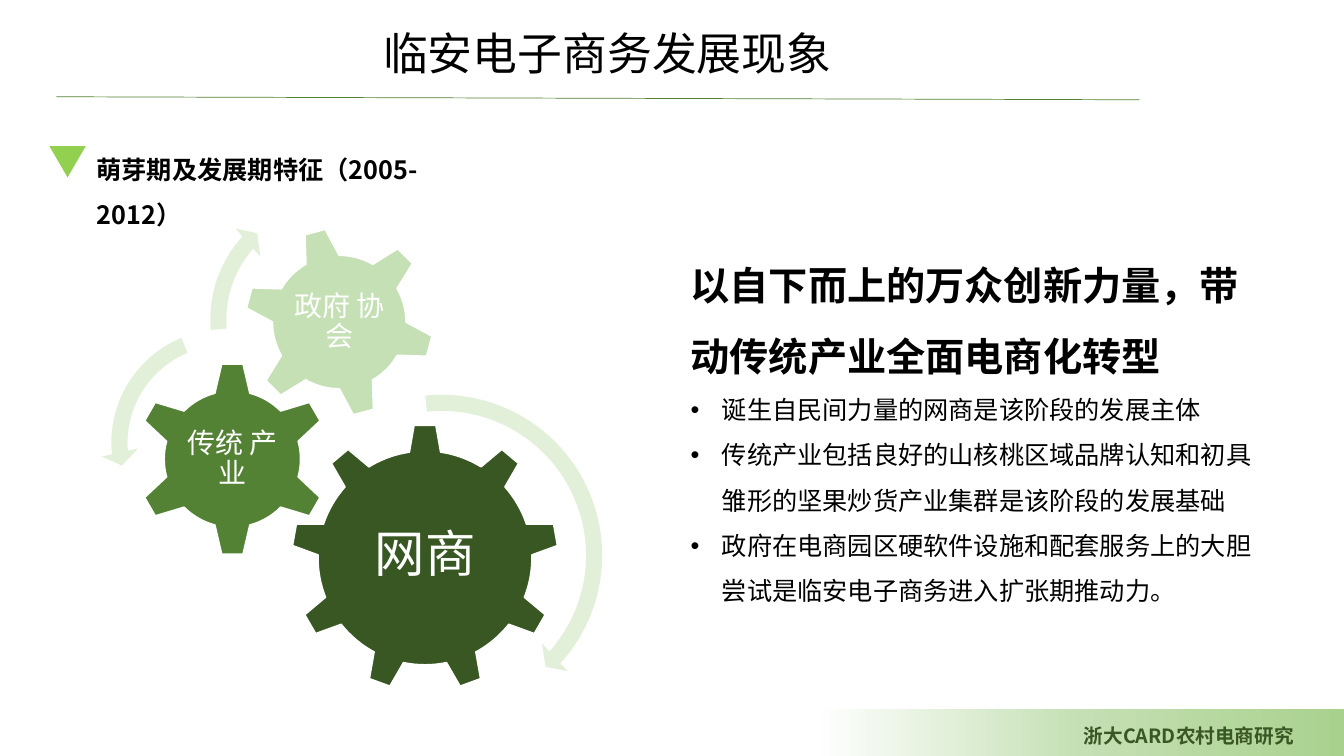
from copy import deepcopy
from dataclasses import dataclass

from lxml.etree import SubElement
from pptx import Presentation
from pptx.dml.color import RGBColor
from pptx.enum.shapes import MSO_CONNECTOR, MSO_SHAPE as Preset
from pptx.enum.text import MSO_ANCHOR as Anchor, MSO_AUTO_SIZE as AutoSize, PP_ALIGN as Align
from pptx.oxml.ns import qn
from pptx.util import Inches, Pt

Box = tuple[float, float, float, float]


@dataclass(frozen=True)
class Theme:
    font: str = "Noto Sans CJK SC"
    ink: str = "000000"
    white: str = "FFFFFF"
    dark: str = "385723"
    green: str = "548235"
    soft: str = "A9D18E"
    light: str = "C5E0B4"
    pale: str = "E2F0D9"
    marker: str = "92D050"
    title_size: int = 32
    claim_size: int = 28
    body_size: int = 18
    footer_size: int = 14
    main_gear_size: int = 36
    gear_size: int = 20


THEME = Theme()


@dataclass(frozen=True)
class Gear:
    label: str
    preset: Preset
    box: Box
    label_box: Box
    color: str
    size: int = THEME.gear_size
    inset: float = 0.03
    rotation: float = 0


@dataclass(frozen=True)
class TurnArrow:
    preset: Preset
    left: float
    top: float
    side: float
    adjustments: tuple[float, ...]


GEARS = [
    Gear("网商", Preset.GEAR_9, (2.89, 4.21, 2.65, 2.65), (3.42, 4.84, 1.59, 1.36),
         THEME.dark, THEME.main_gear_size, 0.05),
    Gear("传统 产业", Preset.GEAR_6, (1.34, 3.59, 1.93, 1.93), (1.83, 4.08, 0.96, 0.95),
         THEME.green),
    Gear("政府 协会", Preset.GEAR_6, (2.42, 2.25, 1.89, 1.89), (2.84, 2.67, 1.06, 1.06),
         THEME.light, rotation=345),
]
TURN_ARROWS = [
    TurnArrow(Preset.CIRCULAR_ARROW, 2.68, 3.81, 3.4, (0.047, 2.99, 25.212, 158.505, 0.055)),
    TurnArrow(Preset.LEFT_CIRCULAR_ARROW, 1, 3.16, 2.47, (0.065, 4.3, 104.891, 148.378, 0.075)),
    TurnArrow(Preset.CIRCULAR_ARROW, 1.98, 1.84, 2.66, (0.06, 3.941, 133.138, 105.082, 0.07)),
]
CLAIM = "以自下而上的万众创新力量，带动传统产业全面电商化转型"
FEATURES = [
    "诞生自民间力量的网商是该阶段的发展主体",
    "传统产业包括良好的山核桃区域品牌认知和初具雏形的坚果炒货产业集群是该阶段的发展基础",
    "政府在电商园区硬软件设施和配套服务上的大胆尝试是临安电子商务进入扩张期推动力。",
]


def rgb(color: str) -> RGBColor:
    return RGBColor.from_string(color)


def inches(box: Box) -> list[Inches]:
    return [Inches(length) for length in box]


def write(paragraph, text: str, *, size: int, color: str = THEME.ink, bold: bool = False,
          align: Align = Align.LEFT, spacing: float = 1.0, bullet: bool = False) -> None:
    props = paragraph._p.get_or_add_pPr()
    indent = Inches(0.31) if bullet else 0
    props.set("marL", str(indent))
    props.set("indent", str(-indent))
    if bullet:
        SubElement(props, qn("a:buChar")).set("char", "•")
    else:
        SubElement(props, qn("a:buNone"))
    paragraph.alignment = align
    paragraph.line_spacing = spacing
    paragraph.space_before = Pt(0)
    run = paragraph.add_run()
    run.text = text
    run.font.size, run.font.bold, run.font.name = Pt(size), bold, THEME.font
    run.font.color.rgb = rgb(color)
    SubElement(run._r.get_or_add_rPr(), qn("a:ea")).set("typeface", THEME.font)


def prepare(holder, box: Box, anchor: Anchor = Anchor.TOP,
            fit: AutoSize = AutoSize.SHAPE_TO_FIT_TEXT):
    """Place a text holder and return its wrapping text frame."""
    holder.left, holder.top, holder.width, holder.height = inches(box)
    frame = holder.text_frame
    frame.word_wrap, frame.auto_size, frame.vertical_anchor = True, fit, anchor
    return frame


def add_filled(slide, preset: Preset, box: Box, color: str):
    shape = slide.shapes.add_shape(preset, *inches(box))
    shape.shadow.inherit = False
    shape.fill.solid()
    shape.fill.fore_color.rgb = rgb(color)
    shape.line.fill.background()
    return shape


def add_text_box(slide, box: Box, **placing):
    return prepare(slide.shapes.add_textbox(*inches(box)), box, **placing)


def add_footer(slide) -> None:
    band = add_filled(slide, Preset.RECTANGLE, (8.08, 7.03, 5.26, 0.47), THEME.white)
    band.fill.gradient()
    band.fill.gradient_angle = 180
    stop_list = band._element.spPr.find(qn("a:gradFill")).find(qn("a:gsLst"))
    stop_list.insert(1, deepcopy(stop_list[0]))
    colors = (THEME.soft, THEME.light, THEME.white)
    for stop, position, color in zip(band.fill.gradient_stops, (0, 0.5, 1), colors):
        stop.position = position
        stop.color.rgb = rgb(color)
    credit = add_text_box(slide, (10.65, 7.13, 2.69, 0.34))
    write(credit.paragraphs[0], "浙大CARD农村电商研究", size=THEME.footer_size,
          color=THEME.dark, bold=True, align=Align.JUSTIFY)


def add_title_rule(slide) -> None:
    rule = slide.shapes.add_connector(
        MSO_CONNECTOR.STRAIGHT, *inches((0.56, 0.96, 11.3, 0.99)))
    rule.line.color.rgb = rgb(THEME.green)
    rule.line.width = Pt(0.5)
    SubElement(rule._element.spPr, qn("a:effectLst"))


def add_heading(slide) -> None:
    marker = add_filled(slide, Preset.ISOSCELES_TRIANGLE, (0.49, 1.45, 0.36, 0.31), THEME.marker)
    marker.rotation = 180
    heading = add_text_box(slide, (0.86, 1.33, 4.34, 0.56), fit=AutoSize.NONE)
    heading.margin_right = Inches(0.5)
    write(heading.paragraphs[0], "萌芽期及发展期特征（2005-2012）",
          size=THEME.body_size, bold=True, spacing=1.5)


def add_gear(slide, gear: Gear) -> None:
    wheel = add_filled(slide, gear.preset, gear.box, gear.color)
    wheel.rotation = gear.rotation
    wheel.line.color.rgb = rgb(THEME.white)
    wheel.line.width = Pt(1)
    label = add_text_box(slide, gear.label_box, anchor=Anchor.MIDDLE, fit=AutoSize.NONE)
    label.margin_left = label.margin_right = Inches(gear.inset)
    label.margin_top = label.margin_bottom = Inches(gear.inset)
    write(label.paragraphs[0], gear.label, size=gear.size, color=THEME.white,
          align=Align.CENTER, spacing=0.9)


def add_turn_arrow(slide, arrow: TurnArrow) -> None:
    box = (arrow.left, arrow.top, arrow.side, arrow.side)
    turn = add_filled(slide, arrow.preset, box, THEME.pale)
    for index, value in enumerate(arrow.adjustments):
        turn.adjustments[index] = value


def main() -> None:
    deck = Presentation()
    deck.slide_width, deck.slide_height = Inches(13.33), Inches(7.5)
    slide = deck.slides.add_slide(deck.slide_layouts[1])

    title = prepare(slide.shapes.title, (3.7, 0.2, 6.19, 0.64))
    write(title.paragraphs[0], "临安电子商务发展现象", size=THEME.title_size, align=Align.JUSTIFY)
    add_footer(slide)
    add_title_rule(slide)
    add_heading(slide)

    body = prepare(slide.placeholders[1], (6.75, 2.31, 5.82, 4.24))
    write(body.paragraphs[0], CLAIM, size=THEME.claim_size, bold=True, spacing=1.5)
    for feature in FEATURES:
        write(body.add_paragraph(), feature, size=THEME.body_size, spacing=1.5, bullet=True)

    for gear in GEARS:
        add_gear(slide, gear)
    for arrow in TURN_ARROWS:
        add_turn_arrow(slide, arrow)
    deck.save("out.pptx")


if __name__ == "__main__":
    main()
